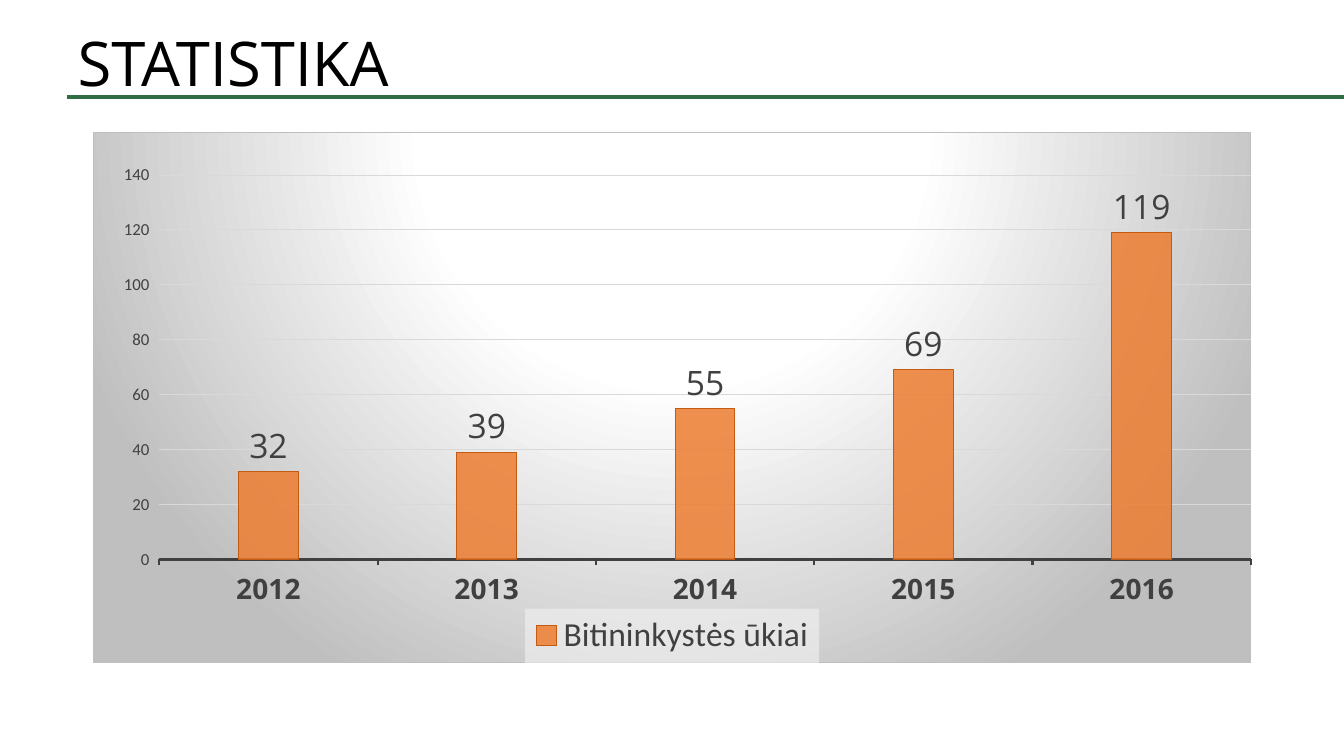
from lxml import etree
from pptx import Presentation
from pptx.chart.data import CategoryChartData
from pptx.dml.color import RGBColor
from pptx.enum.chart import XL_CHART_TYPE as CT, XL_LABEL_POSITION as LP
from pptx.enum.chart import XL_LEGEND_POSITION as LEG, XL_TICK_MARK as TM
from pptx.enum.shapes import MSO_CONNECTOR as MC
from pptx.enum.text import MSO_ANCHOR, MSO_AUTO_SIZE, PP_ALIGN
from pptx.oxml import parse_xml
from pptx.oxml.ns import qn
from pptx.util import Cm, Pt

BLACK = RGBColor(0x00, 0x00, 0x00)
GREEN = RGBColor(0x2F, 0x6D, 0x44)
DARK = RGBColor(0x40, 0x40, 0x40)
GRID = RGBColor(0xD9, 0xD9, 0xD9)
NS = ('xmlns:a="http://schemas.openxmlformats.org/drawingml/2006/main" '
      'xmlns:c="http://schemas.openxmlformats.org/drawingml/2006/chart"')


def style_font(font, name, size, color=DARK, bold=False):
    values = {"name": name, "size": Pt(size), "bold": bold}
    for key, value in values.items():
        setattr(font, key, value)
    font.color.rgb = color


def style_line(line, color, width):
    line.color.rgb = color
    line.width = Pt(width)


prs = Presentation()
prs.slide_width, prs.slide_height = Cm(33.87), Cm(19.05)
s = prs.slides.add_slide(prs.slide_layouts[5])

# Green rule under the title
rule = s.shapes.add_connector(MC.STRAIGHT, Cm(1.7), Cm(2.44), Cm(33.87), Cm(2.44))
style_line(rule.line, GREEN, 3)
etree.SubElement(rule._element.spPr, qn("a:effectLst"))

# Title
title = s.shapes.title
title.left, title.top, title.width, title.height = Cm(1.7), Cm(0.03), Cm(29.21), Cm(3.28)
tf = title.text_frame
tf.auto_size = MSO_AUTO_SIZE.NONE
tf.vertical_anchor = MSO_ANCHOR.MIDDLE
p = tf.paragraphs[0]
p.alignment = PP_ALIGN.LEFT
p.line_spacing = 0.9
r = p.add_run()
r.text = "STATISTIKA"
style_font(r.font, "Open Sans", 44, BLACK)

# Chart data: the outer two series are empty and keep the bars narrow
data = CategoryChartData()
data.categories = ["2012", "2013", "2014", "2015", "2016"]
data.add_series("Series 1", [None] * 5)
data.add_series("Bitininkystės ūkiai", [32, 39, 55, 69, 119])
data.add_series("Series 3", [None] * 5)
chart = s.shapes.add_chart(CT.COLUMN_CLUSTERED, Cm(2.34), Cm(3.33),
                           Cm(29.21), Cm(13.39), data).chart
chart.has_title = False
style_font(chart.font, "Calibri", 10, BLACK)

# Series and their labels
plot = chart.plots[0]
plot.gap_width, plot.overlap = 65, 0
plot.vary_by_categories = False
series_styles = [("5B9BD5", "2E75B6", "Calibri", 12),
                 ("ED7D31", "C55A11", "Open Sans", 24),
                 ("A5A5A5", "7C7C7C", "Calibri", 12)]
for ser, (fill, outline, font, size) in zip(plot.series, series_styles):
    ser.format.fill.solid()
    ser.format.fill.fore_color.rgb = RGBColor.from_string(fill)
    color = ser._element.spPr.find(qn("a:solidFill")).find(qn("a:srgbClr"))
    etree.SubElement(color, qn("a:alpha"), val="85000")
    style_line(ser.format.line, RGBColor.from_string(outline), 0.75)
    labels = ser.data_labels
    labels.show_value = True
    labels.position = LP.OUTSIDE_END
    style_font(labels.font, font, size)

# Axes
cat, val = chart.category_axis, chart.value_axis
cat.major_tick_mark = val.major_tick_mark = TM.OUTSIDE
style_font(cat.tick_labels.font, "Open Sans", 20, bold=True)
style_line(cat.format.line, DARK, 1.5)
style_font(val.tick_labels.font, "Calibri", 12)
val.format.line.fill.background()
val.minimum_scale, val.maximum_scale, val.major_unit = 0, 140, 20
val.has_major_gridlines = True
style_line(val.major_gridlines.format.line, GRID, 0.75)

# Legend, showing only the middle series on a pale panel
chart.has_legend = True
legend = chart.legend
legend.position = LEG.BOTTOM
legend.include_in_layout = False
style_font(legend.font, "Calibri", 24)
leg = legend._element
for offset, idx in enumerate((0, 2), 1):
    leg.insert(offset, parse_xml(
        f'<c:legendEntry {NS}><c:idx val="{idx}"/><c:delete val="1"/></c:legendEntry>'))
leg.find(qn("c:txPr")).addprevious(parse_xml(
    f'<c:spPr {NS}><a:solidFill><a:srgbClr val="F2F2F2"><a:alpha val="60000"/>'
    '</a:srgbClr></a:solidFill></c:spPr>'))

# Plot area position
area = chart._chartSpace.chart.plotArea
for old in area.findall(qn("c:layout")):
    area.remove(old)
box = {"x": 0.057, "y": 0.08, "w": 0.943, "h": 0.725}
sizes = "".join(f'<c:{key} val="{value}"/>' for key, value in box.items())
area.insert(0, parse_xml(
    f'<c:layout {NS}><c:manualLayout><c:layoutTarget val="inner"/>'
    f'<c:xMode val="edge"/><c:yMode val="edge"/>{sizes}</c:manualLayout></c:layout>'))

# Chart background: radial gradient with a thin border
stops = "".join(f'<a:gs pos="{pos}"><a:srgbClr val="{color}"/></a:gs>' for pos, color in
                [(0, "FFFFFF"), (39000, "FFFFFF"), (100000, "BFBFBF")])
chart._chartSpace.chart.addnext(parse_xml(
    f'<c:spPr {NS}><a:gradFill><a:gsLst>{stops}</a:gsLst><a:path path="circle">'
    '<a:fillToRect l="50000" t="-80000" r="50000" b="180000"/></a:path></a:gradFill>'
    '<a:ln w="9525"><a:solidFill><a:srgbClr val="BFBFBF"/></a:solidFill></a:ln></c:spPr>'))

prs.save("out.pptx")
